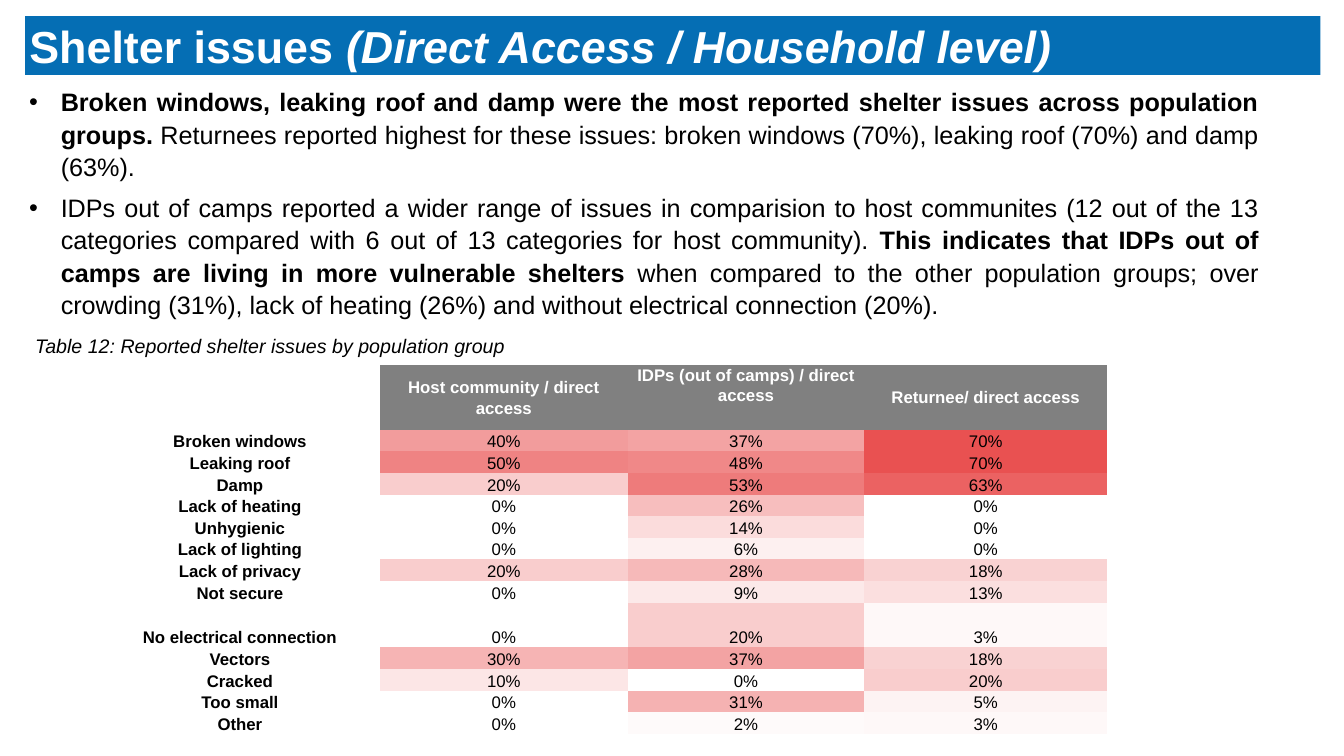
"""Build the shelter issues slide with its heat-map table."""
from dataclasses import dataclass

from pptx import Presentation
from pptx.dml.color import RGBColor
from pptx.enum.text import MSO_ANCHOR, MSO_AUTO_SIZE, PP_ALIGN
from pptx.util import Pt

LEFT, CENTER, JUSTIFY = PP_ALIGN.LEFT, PP_ALIGN.CENTER, PP_ALIGN.JUSTIFY
TOP, MIDDLE, BOTTOM = MSO_ANCHOR.TOP, MSO_ANCHOR.MIDDLE, MSO_ANCHOR.BOTTOM
NO_AUTOFIT = MSO_AUTO_SIZE.NONE
PLAIN_TABLE_STYLE = "{2D5ABB26-0587-4C30-8999-92F81FD0307C}"


@dataclass(frozen=True)
class Theme:
    """Colours, font and type sizes of the slide."""
    font: str = "Arial"
    banner: RGBColor = RGBColor(0x05, 0x6E, 0xB4)
    header: RGBColor = RGBColor(0x80, 0x80, 0x80)
    white: RGBColor = RGBColor(0xFF, 0xFF, 0xFF)
    black: RGBColor = RGBColor(0x00, 0x00, 0x00)
    hottest: RGBColor = RGBColor(0xE9, 0x51, 0x51)
    title_size: int = 32
    body_size: int = 18
    caption_size: int = 14
    table_size: int = 12
    line_spacing: float = 1.07


THEME = Theme()

TITLE = [("Shelter issues ", True, False),
         ("(Direct Access / Household level)", True, True)]
FINDINGS = [
    [("Broken windows, leaking roof and damp were the most reported shelter "
      "issues across population groups. ", True, False),
     ("Returnees reported highest for these issues: broken windows (70%), "
      "leaking roof (70%) and damp (63%).", False, False)],
    [("IDPs out of camps reported a wider range of issues in comparision to "
      "host communites (12 out of the 13 categories compared with 6 out of 13 "
      "categories for host community). ", False, False),
     ("This indicates that IDPs out of camps are living in more vulnerable "
      "shelters ", True, False),
     ("when compared to the other population groups; over crowding (31%), "
      "lack of heating (26%) and without electrical connection (20%).",
      False, False)],
]
CAPTION = [("Table 12: Reported shelter issues by population group", False, True)]

HEADERS = [("Host community / direct access", MIDDLE),
           ("IDPs (out of camps) / direct access", TOP),
           ("Returnee/ direct access", MIDDLE)]
ISSUES = [
    ("Broken windows", 40, 37, 70),
    ("Leaking roof", 50, 48, 70),
    ("Damp", 20, 53, 63),
    ("Lack of heating", 0, 26, 0),
    ("Unhygienic", 0, 14, 0),
    ("Lack of lighting", 0, 6, 0),
    ("Lack of privacy", 20, 28, 18),
    ("Not secure", 0, 9, 13),
    ("No electrical connection", 0, 20, 3),
    ("Vectors", 30, 37, 18),
    ("Cracked", 10, 0, 20),
    ("Too small", 0, 31, 5),
    ("Other", 0, 2, 3),
]
TALL_ISSUE = "No electrical connection"
HIGHEST = max(max(values) for _, *values in ISSUES)
COLUMN_WIDTHS = [200, 177, 169, 173.5]
HEADER_HEIGHT, ROW_HEIGHT, TALL_HEIGHT = 46.4, 15.4, 32


def place(shape, left, top, width, height):
    """Move and size a shape, in points."""
    shape.left, shape.top = Pt(left), Pt(top)
    shape.width, shape.height = Pt(width), Pt(height)


def write_runs(paragraph, runs, size, color, align):
    """Add (text, bold, italic) runs to a paragraph and format them."""
    paragraph.alignment = align
    paragraph.space_before = Pt(0)
    for text, bold, italic in runs:
        run = paragraph.add_run()
        run.text = text
        run.font.name, run.font.size = THEME.font, Pt(size)
        run.font.bold, run.font.italic = bold, italic
        run.font.color.rgb = color


def heat_color(value):
    """Shade from white at zero to the hottest red at the highest value."""
    return RGBColor(*(round(255 - (255 - channel) * value / HIGHEST)
                      for channel in THEME.hottest))


def fill_title(title):
    """Turn the title placeholder into the banner."""
    place(title, 18, 11.5, 925.2, 42)
    title.fill.solid()
    title.fill.fore_color.rgb = THEME.banner
    frame = title.text_frame
    frame.auto_size, frame.word_wrap = NO_AUTOFIT, True
    frame.vertical_anchor = MIDDLE
    frame.margin_left = Pt(3)
    frame.margin_top = frame.margin_right = frame.margin_bottom = 0
    write_runs(frame.paragraphs[0], TITLE, THEME.title_size, THEME.white, LEFT)


def fill_findings(body):
    """Write the bulleted findings into the body placeholder."""
    place(body, 13.7, 56.9, 892.8, 177)
    frame = body.text_frame
    frame.auto_size, frame.word_wrap = NO_AUTOFIT, True
    frame.vertical_anchor = TOP
    for index, runs in enumerate(FINDINGS):
        paragraph = frame.add_paragraph() if index else frame.paragraphs[0]
        properties = paragraph._p.get_or_add_pPr()
        properties.set("marL", str(Pt(22.5)))
        properties.set("indent", str(Pt(-22.5)))
        write_runs(paragraph, runs, THEME.body_size, THEME.black, JUSTIFY)
        paragraph.line_spacing = THEME.line_spacing
        paragraph.space_after = Pt(6)


def add_caption(slide):
    """Add the table caption."""
    caption = slide.shapes.add_textbox(Pt(18), Pt(234.7), Pt(882.7), Pt(24.5))
    caption.text_frame.word_wrap = True
    write_runs(caption.text_frame.paragraphs[0], CAPTION,
               THEME.caption_size, THEME.black, LEFT)


def fill_cell(cell, text, fill=None, color=THEME.black, bold=False, anchor=BOTTOM):
    """Write one centred table cell, with a fill if one is given."""
    cell.margin_left = cell.margin_right = Pt(5)
    cell.margin_top = cell.margin_bottom = 0
    cell.vertical_anchor = anchor
    if fill is None:
        cell.fill.background()
    else:
        cell.fill.solid()
        cell.fill.fore_color.rgb = fill
    paragraph = cell.text_frame.paragraphs[0]
    paragraph.line_spacing = THEME.line_spacing
    if text:
        write_runs(paragraph, [(text, bold, False)], THEME.table_size, color, CENTER)


def add_issue_table(slide):
    """Add the heat-map table of issues by population group."""
    heights = [HEADER_HEIGHT] + [TALL_HEIGHT if name == TALL_ISSUE else ROW_HEIGHT
                                 for name, *_ in ISSUES]
    table = slide.shapes.add_table(
        len(heights), len(COLUMN_WIDTHS), Pt(71.4), Pt(260.7),
        Pt(sum(COLUMN_WIDTHS)), Pt(sum(heights))).table
    table.first_row = table.horz_banding = False
    table._tbl.tblPr[0].text = PLAIN_TABLE_STYLE
    for column, width in zip(table.columns, COLUMN_WIDTHS):
        column.width = Pt(width)
    for row, height in zip(table.rows, heights):
        row.height = Pt(height)
    fill_cell(table.cell(0, 0), "")
    for column, (text, anchor) in enumerate(HEADERS, 1):
        fill_cell(table.cell(0, column), text, THEME.header, THEME.white, True, anchor)
    for row, (name, *values) in enumerate(ISSUES, 1):
        fill_cell(table.cell(row, 0), name, bold=True)
        for column, value in enumerate(values, 1):
            fill_cell(table.cell(row, column), f"{value}%", heat_color(value))


def main():
    """Build and save the presentation."""
    presentation = Presentation()
    presentation.slide_width, presentation.slide_height = Pt(960), Pt(540)
    slide = presentation.slides.add_slide(presentation.slide_layouts[1])
    fill_title(slide.shapes.title)
    fill_findings(slide.placeholders[1])
    add_caption(slide)
    add_issue_table(slide)
    presentation.save("out.pptx")


if __name__ == "__main__":
    main()
